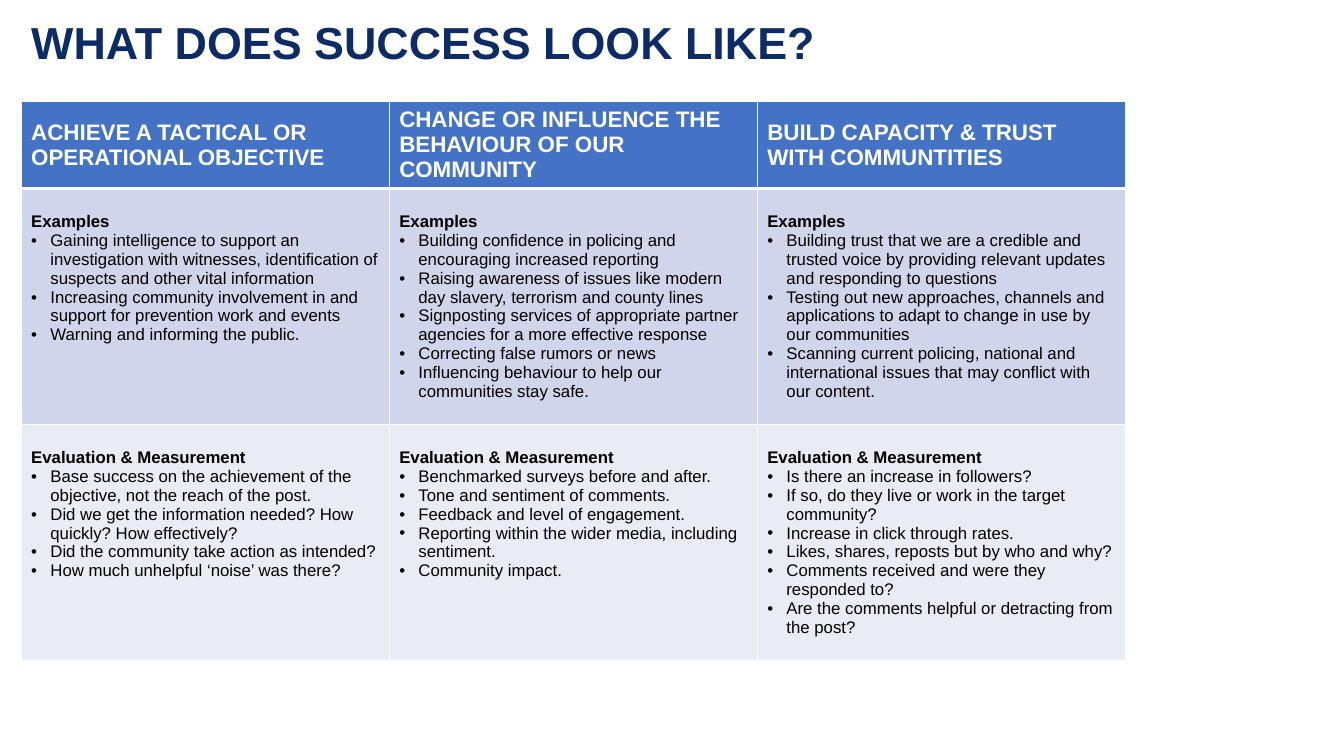
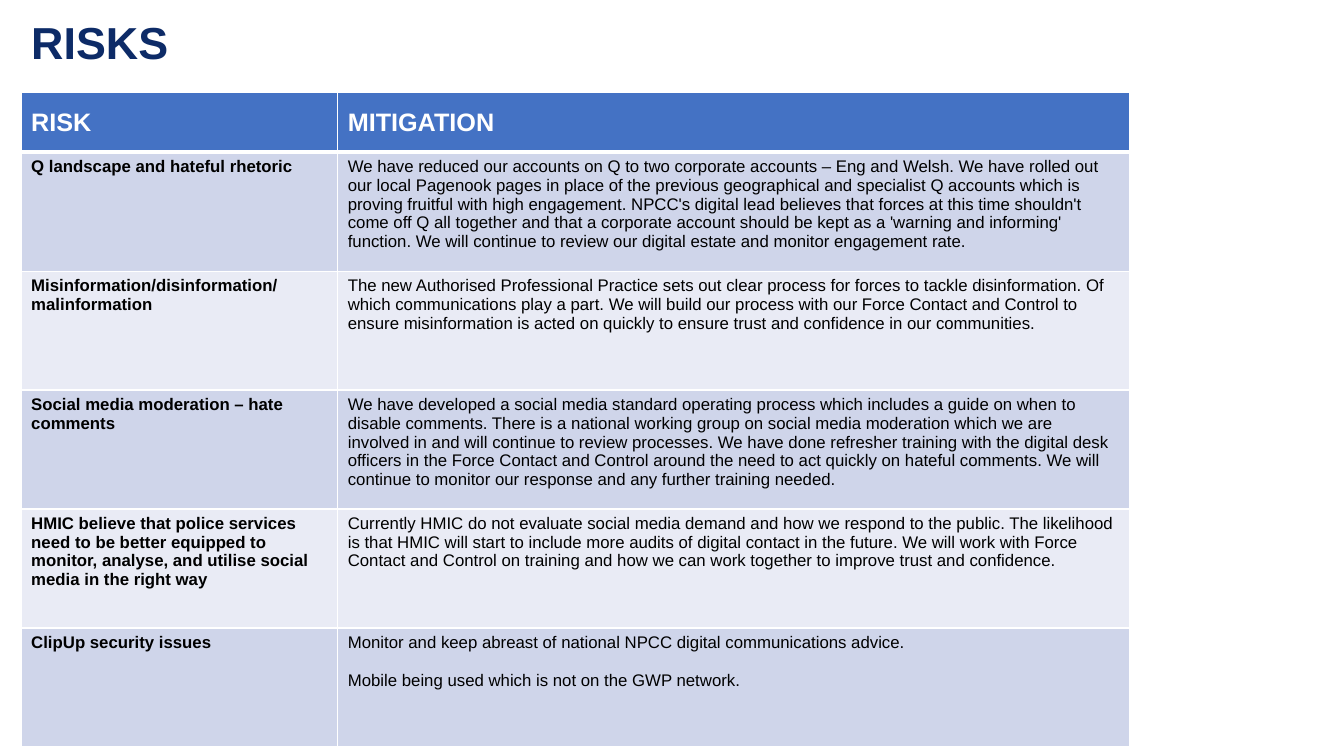
from dataclasses import dataclass

from lxml.etree import SubElement
from pptx import Presentation
from pptx.dml.color import RGBColor as RGB
from pptx.enum.text import MSO_ANCHOR as Anchor, PP_ALIGN as Align
from pptx.oxml.ns import qn
from pptx.util import Inches, Pt


@dataclass(frozen=True)
class Theme:
    font: str = "Arial"
    navy: str = "0D2B67"
    header: str = "4472C4"
    bands: tuple = ("CFD5EA", "E9EBF5")
    white: str = "FFFFFF"
    black: str = "000000"
    title_size: float = 32
    body_size: float = 12
    rule: float = 1
    header_rule: float = 3
    line_gap: float = 14


class Deck:
    def __init__(self, theme):
        self.theme = theme
        self.prs = Presentation()
        self.prs.slide_width, self.prs.slide_height = Inches(13.33), Inches(7.5)
        self.slide = None

    def style(self, p, size, color, bold):
        for r in p.runs:
            r.font.name = self.theme.font
            r.font.size = Pt(size)
            r.font.bold = bold
            r.font.color.rgb = RGB.from_string(color)

    def add_slide(self, title):
        self.slide = self.prs.slides.add_slide(self.prs.slide_layouts[5])
        sp = self.slide.shapes.title
        sp.left, sp.top = Inches(0.21), Inches(0.13)
        sp.width, sp.height = Inches(11.04), Inches(0.64)
        tf = sp.text_frame
        tf.text = title
        tf.vertical_anchor = Anchor.MIDDLE
        p = tf.paragraphs[0]
        p.alignment = Align.LEFT
        p.line_spacing = 0.9
        self.style(p, self.theme.title_size, self.theme.navy, True)

    def borders(self, cell, top, bottom):
        tcPr = cell._tc.get_or_add_tcPr()
        widths = {"L": self.theme.rule, "R": self.theme.rule, "T": top, "B": bottom}
        for side, width in widths.items():
            ln = SubElement(tcPr, qn(f"a:ln{side}"), w=str(Pt(width)))
            fill = SubElement(ln, qn("a:solidFill"))
            SubElement(fill, qn("a:srgbClr"), val=self.theme.white)

    def bullet(self, p):
        pPr = p._p.get_or_add_pPr()
        pPr.set("marL", str(Inches(0.19)))
        pPr.set("indent", str(-Inches(0.19)))
        SubElement(pPr, qn("a:buFont"), typeface=self.theme.font)
        SubElement(pPr, qn("a:buChar"), char="•")

    def paragraphs(self, cell, texts):
        tf = cell.text_frame
        for i, text in enumerate(texts):
            p = tf.add_paragraph() if i else tf.paragraphs[0]
            p.text = text
            yield i, p

    def header_cell(self, cell, text, size):
        cell.vertical_anchor = Anchor.MIDDLE
        cell.text_frame.text = text
        self.style(cell.text_frame.paragraphs[0], size, self.theme.white, True)

    def list_cell(self, cell, heading, items):
        cell.margin_top = Inches(0.24)
        for i, p in self.paragraphs(cell, [heading, *items]):
            if i:
                self.bullet(p)
            self.style(p, self.theme.body_size, self.theme.black, i == 0)

    def prose_cell(self, cell, texts, bold):
        for i, p in self.paragraphs(cell, texts):
            if i:
                p.space_before = Pt(self.theme.line_gap)
            self.style(p, self.theme.body_size, self.theme.black, bold)

    def add_table(self, top, widths, heights, headers, header_size):
        t = self.theme
        frame = self.slide.shapes.add_table(
            len(heights), len(widths), Inches(0.21), Inches(top),
            Inches(sum(widths)), Inches(sum(heights)))
        table = frame.table
        for col, width in zip(table.columns, widths):
            col.width = Inches(width)
        for y, (row, height) in enumerate(zip(table.rows, heights)):
            row.height = Inches(height)
            color = t.bands[(y - 1) % 2] if y else t.header
            for cell in row.cells:
                self.borders(cell, t.header_rule if y == 1 else t.rule,
                             t.rule if y else t.header_rule)
                cell.fill.solid()
                cell.fill.fore_color.rgb = RGB.from_string(color)
        for cell, text in zip(table.rows[0].cells, headers):
            self.header_cell(cell, text, header_size)
        return table


GOALS = [
    "ACHIEVE A TACTICAL OR OPERATIONAL OBJECTIVE",
    "CHANGE OR INFLUENCE THE BEHAVIOUR OF OUR COMMUNITY",
    "BUILD CAPACITY & TRUST WITH COMMUNTITIES",
]

SUCCESS = {
    "Examples": [
        [
            "Gaining intelligence to support an investigation with witnesses, "
            "identification of suspects and other vital information",
            "Increasing community involvement in and support for prevention work and events",
            "Warning and informing the public.",
        ],
        [
            "Building confidence in policing and encouraging increased reporting",
            "Raising awareness of issues like modern day slavery, terrorism and county lines",
            "Signposting services of appropriate partner agencies for a more effective response",
            "Correcting false rumors or news",
            "Influencing behaviour to help our communities stay safe.",
        ],
        [
            "Building trust that we are a credible and trusted voice by providing "
            "relevant updates and responding to questions",
            "Testing out new approaches, channels and applications to adapt to "
            "change in use by our communities",
            "Scanning current policing, national and international issues that "
            "may conflict with our content.",
        ],
    ],
    "Evaluation & Measurement": [
        [
            "Base success on the achievement of the objective, not the reach of the post.",
            "Did we get the information needed? How quickly? How effectively?",
            "Did the community take action as intended?",
            "How much unhelpful ‘noise’ was there?",
        ],
        [
            "Benchmarked surveys before and after.",
            "Tone and sentiment of comments.",
            "Feedback and level of engagement.",
            "Reporting within the wider media, including sentiment.",
            "Community impact.",
        ],
        [
            "Is there an increase in followers?",
            "If so, do they live or work in the target community?",
            "Increase in click through rates.",
            "Likes, shares, reposts but by who and why?",
            "Comments received and were they responded to?",
            "Are the comments helpful or detracting from the post?",
        ],
    ],
}

RISKS = {
    "Q landscape and hateful rhetoric": [
        "We have reduced our accounts on Q to two corporate accounts – Eng and Welsh. "
        "We have rolled out our local Pagenook pages in place of the previous geographical "
        "and specialist Q accounts which is proving fruitful with high engagement. "
        "NPCC's digital lead believes that forces at this time shouldn't come off Q all "
        "together and that a corporate account should be kept as a 'warning and informing' "
        "function. We will continue to review our digital estate and monitor engagement rate.",
    ],
    "Misinformation/disinformation/malinformation": [
        "The new Authorised Professional Practice sets out clear process for forces to "
        "tackle disinformation. Of which communications play a part. We will build our "
        "process with our Force Contact and Control to ensure misinformation is acted on "
        "quickly to ensure trust and confidence in our communities.",
    ],
    "Social media moderation – hate comments": [
        "We have developed a social media standard operating process which includes a guide "
        "on when to disable comments. There is a national working group on social media "
        "moderation which we are involved in and will continue to review processes. We have "
        "done refresher training with the digital desk officers in the Force Contact and "
        "Control around the need to act quickly on hateful comments. We will continue to "
        "monitor our response and any further training needed.",
    ],
    "HMIC believe that police services need to be better equipped to monitor, analyse, "
    "and utilise social media in the right way": [
        "Currently HMIC do not evaluate social media demand and how we respond to the public. "
        "The likelihood is that HMIC will start to include more audits of digital contact in "
        "the future. We will work with Force Contact and Control on training and how we can "
        "work together to improve trust and confidence.",
    ],
    "ClipUp security issues": [
        "Monitor and keep abreast of national NPCC digital communications advice.",
        "Mobile being used which is not on the GWP network.",
    ],
}


def success_slide(deck):
    deck.add_slide("WHAT DOES SUCCESS LOOK LIKE?")
    table = deck.add_table(1.01, [3.65] * 3, [0.86, 2.34, 2.34], GOALS, 16)
    for y, (heading, columns) in enumerate(SUCCESS.items(), 1):
        for x, items in enumerate(columns):
            deck.list_cell(table.cell(y, x), heading, items)


def risks_slide(deck):
    deck.add_slide("RISKS")
    table = deck.add_table(0.92, [3.14, 7.85], [0.59] + [1.18] * len(RISKS),
                           ["RISK", "MITIGATION"], 18)
    for y, (risk, mitigation) in enumerate(RISKS.items(), 1):
        deck.prose_cell(table.cell(y, 0), [risk], True)
        deck.prose_cell(table.cell(y, 1), mitigation, False)


def main():
    deck = Deck(Theme())
    success_slide(deck)
    risks_slide(deck)
    deck.prs.save("out.pptx")


if __name__ == "__main__":
    main()
